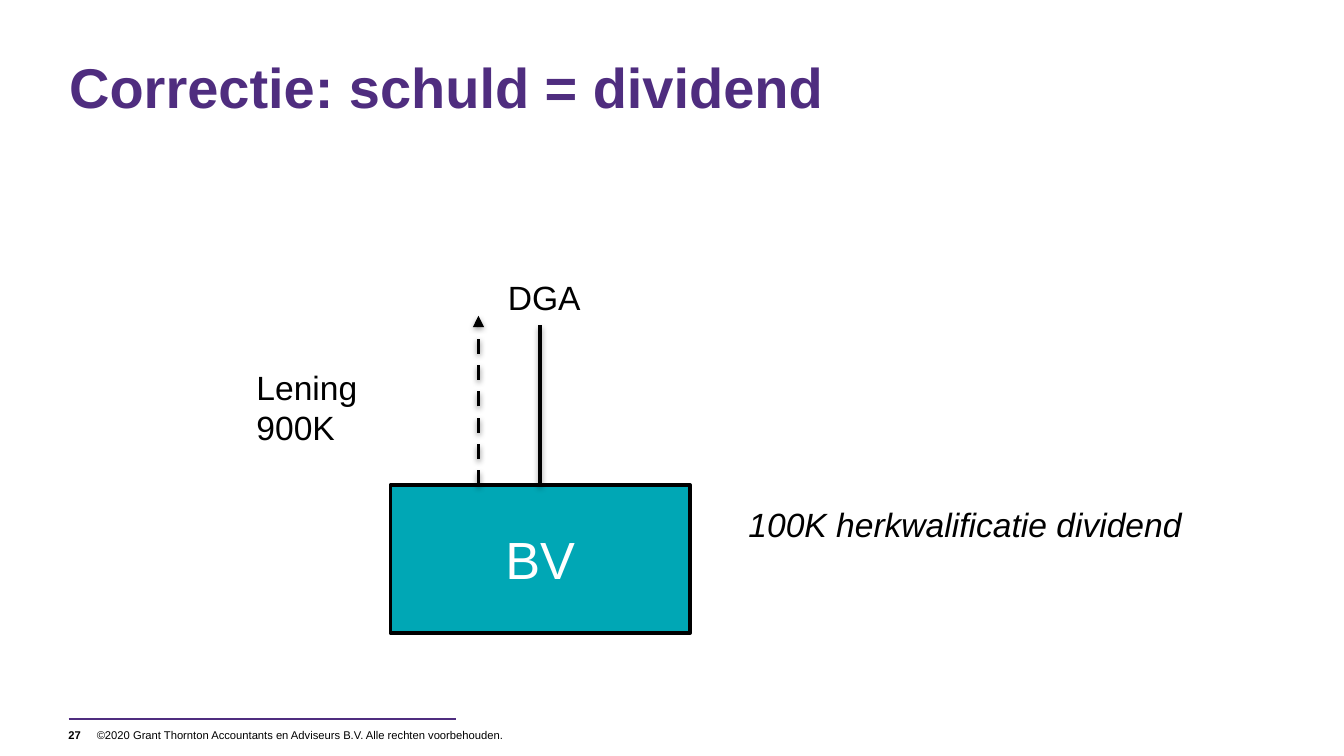
from lxml import etree
from pptx import Presentation
from pptx.dml.color import RGBColor
from pptx.enum.dml import MSO_LINE
from pptx.enum.shapes import MSO_CONNECTOR, MSO_SHAPE
from pptx.enum.text import MSO_ANCHOR, PP_ALIGN
from pptx.oxml.ns import qn
from pptx.util import Inches, Pt

STRAIGHT = MSO_CONNECTOR.STRAIGHT
RECTANGLE = MSO_SHAPE.RECTANGLE
DASH = MSO_LINE.DASH
TOP, MIDDLE = MSO_ANCHOR.TOP, MSO_ANCHOR.MIDDLE
LEFT, CENTER = PP_ALIGN.LEFT, PP_ALIGN.CENTER

CELL = Inches(0.1)
COLUMNS, ROWS = 100, 56.25
PURPLE, TEAL, BLACK, WHITE = "4F2D7F", "00A7B5", "000000", "FFFFFF"
INSET = (1, 0.5, 1, 0.5)
FLUSH = (0, 0, 0, 0)
BOX_TOP = 36.1


def grid(*cells):
    return [round(CELL * cell) for cell in cells]


def color(hex_value):
    return RGBColor.from_string(hex_value)


def set_attributes(target, values):
    for name, value in values.items():
        setattr(target, name, value)


def write_text(shape, text, size, font_color=BLACK, anchor=TOP, align=LEFT,
               insets=INSET, **styles):
    frame = shape.text_frame
    left, top, right, bottom = grid(*insets)
    set_attributes(frame, {
        "word_wrap": True, "vertical_anchor": anchor,
        "margin_left": left, "margin_top": top,
        "margin_right": right, "margin_bottom": bottom,
    })
    paragraph = frame.paragraphs[0]
    paragraph.alignment = align
    run = paragraph.add_run()
    run.text = text
    set_attributes(run.font, {"name": "Arial", "size": Pt(size), **styles})
    run.font.color.rgb = color(font_color)


def add_label(slide, area, text, size=18, **options):
    write_text(slide.shapes.add_textbox(*grid(*area)), text, size, **options)


def add_company(slide, area, text):
    shape = slide.shapes.add_shape(RECTANGLE, *grid(*area))
    shape.shadow.inherit = False
    shape.fill.solid()
    shape.fill.fore_color.rgb = color(TEAL)
    shape.line.color.rgb = color(BLACK)
    shape.line.width = Pt(2)
    write_text(shape, text, 28, WHITE, MIDDLE, CENTER)


def add_line(slide, start, end, line_color=BLACK, width=2, shadow=False, arrow=False):
    connector = slide.shapes.add_connector(STRAIGHT, *grid(*start, *end))
    connector.line.color.rgb = color(line_color)
    connector.line.width = Pt(width)
    if arrow:
        connector.line.dash_style = DASH
        outline = connector.line._get_or_add_ln()
        etree.SubElement(outline, qn("a:tailEnd"), type="triangle")
    effects = etree.SubElement(connector._element.spPr, qn("a:effectLst"))
    if shadow:
        outer = etree.SubElement(
            effects, qn("a:outerShdw"), blurRad=str(Pt(3.1)), dist=str(Pt(1.6)),
            dir="5400000", rotWithShape="0")
        shade = etree.SubElement(outer, qn("a:srgbClr"), val=BLACK)
        etree.SubElement(shade, qn("a:alpha"), val="38000")


def add_footer(slide):
    add_label(slide, (7.2, 53.7, 32.9, 2),
              "©2020 Grant Thornton Accountants en Adviseurs B.V. Alle rechten voorbehouden.",
              6, anchor=MIDDLE, insets=(0, 0.5, 0, 0.5))
    add_line(slide, (5.1, 53.5), (33.9, 53.5), PURPLE, 1.5)
    add_label(slide, (5.1, 53.7, 2, 2), "27", 6, anchor=MIDDLE, insets=FLUSH, bold=True)


def add_diagram(slide):
    add_company(slide, (29.05, BOX_TOP, 22.3, 11), "BV")
    add_label(slide, (36.8, 20.1, 11.1, 4), "DGA")
    add_line(slide, (40.2, BOX_TOP), (40.2, 24.2), shadow=True)
    add_line(slide, (35.6, BOX_TOP), (35.6, 23.5), shadow=True, arrow=True)
    add_label(slide, (18.1, 26.8, 15.4, 7.1), "Lening 900K")
    add_label(slide, (54.7, 37, 38.1, 4), "100K herkwalificatie dividend", italic=True)


def main():
    presentation = Presentation()
    presentation.slide_width, presentation.slide_height = grid(COLUMNS, ROWS)
    slide = presentation.slides.add_slide(presentation.slide_layouts[6])
    add_footer(slide)
    add_label(slide, (5.15, 3.9, 89.7, 9.2), "Correctie: schuld = dividend", 30,
              font_color=PURPLE, insets=FLUSH, bold=True)
    add_diagram(slide)
    presentation.save("out.pptx")


if __name__ == "__main__":
    main()
